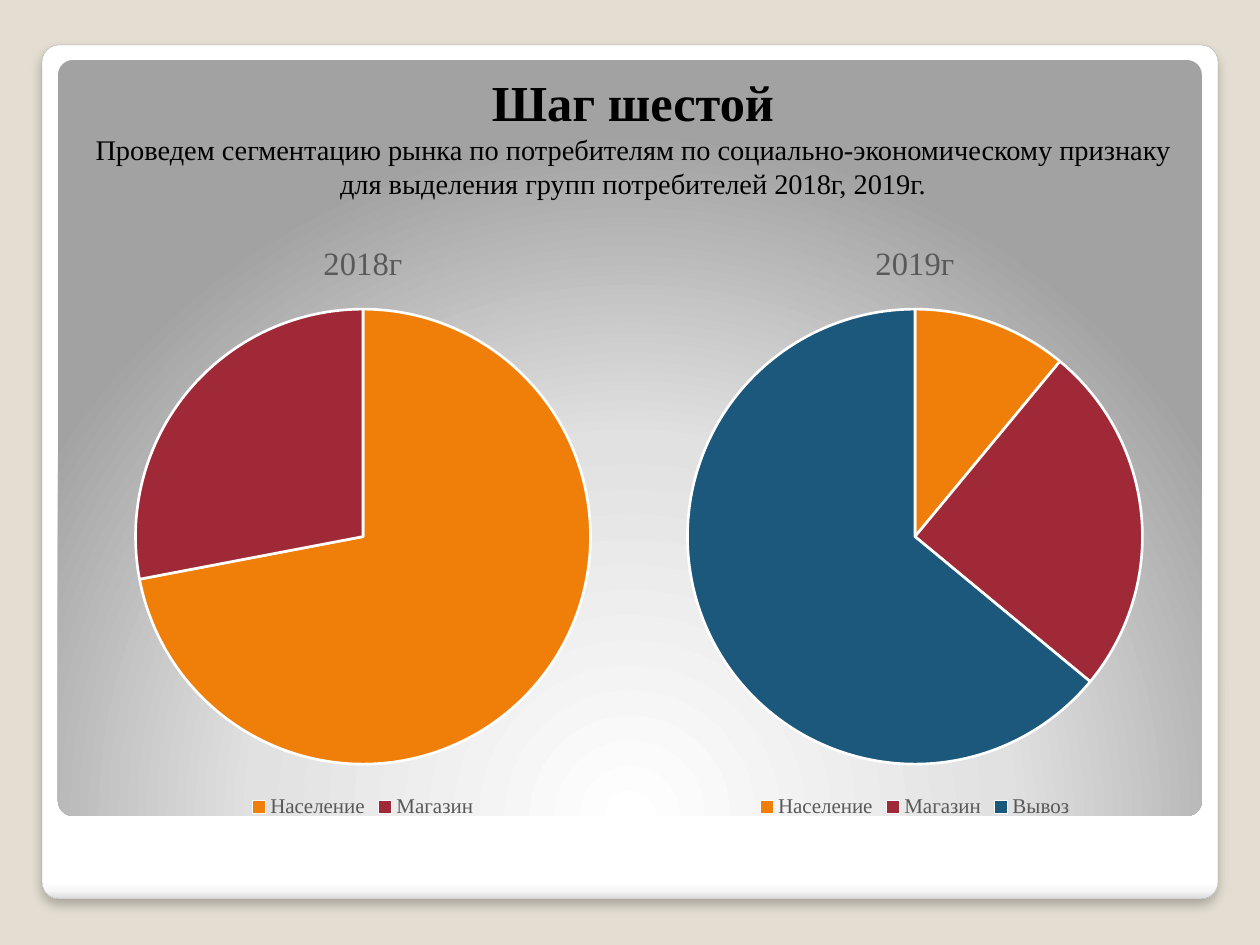
from pptx import Presentation
from pptx.chart.data import CategoryChartData as ChartData
from pptx.dml.color import RGBColor
from pptx.enum.chart import XL_CHART_TYPE as Kind, XL_LEGEND_POSITION as Side
from pptx.enum.shapes import MSO_SHAPE as Shape
from pptx.enum.text import MSO_ANCHOR as Anchor, PP_ALIGN as Align
from pptx.oxml import parse_xml
from pptx.oxml.ns import nsdecls
from pptx.util import Emu, Pt

FACE = "Times New Roman"
HUES = ["F07F09", "9F2936", "1B587C"]
GREY = "595959"


def px(*vals):
    """Turn pixel lengths into EMU."""
    return [Emu(round(v * 914400 / 126)) for v in vals]


def rgb(code):
    """Return the colour for a hex string."""
    return RGBColor.from_string(code)


def style(font, size, hue, bold=False):
    """Set face, size, colour and weight of a font."""
    font.name, font.size, font.bold = FACE, Pt(size), bold
    font.color.rgb = rgb(hue)


def add_panel(slide, box, stops, shade):
    """Add a rounded panel with a gradient fill and no line."""
    panel = slide.shapes.add_shape(Shape.ROUNDED_RECTANGLE, *px(*box))
    panel.adjustments[0] = 0.02
    panel.shadow.inherit = False
    panel.line.fill.background()
    panel.fill.gradient()
    marks = "".join(
        f'<a:gs pos="{pos * 1000}"><a:srgbClr val="{hue}"/></a:gs>'
        for pos, hue in stops)
    grad = parse_xml(
        f'<a:gradFill {nsdecls("a")} rotWithShape="1">'
        f'<a:gsLst>{marks}</a:gsLst>{shade}</a:gradFill>')
    props = panel._element.spPr
    props.replace(props.find(grad.tag), grad)
    return panel


def add_glow(panel):
    """Give a panel a thin edge and a soft shadow below it."""
    panel.line.color.rgb = rgb("A4A4A4")
    panel.line.width = Pt(0.16)
    glow = parse_xml(
        f'<a:outerShdw {nsdecls("a")} blurRad="{Pt(6)}" dist="{Pt(4)}" '
        'dir="5400000" rotWithShape="0"><a:srgbClr val="000000">'
        '<a:alpha val="25000"/></a:srgbClr></a:outerShdw>')
    panel._element.spPr.find(glow.tag.replace("outerShdw", "effectLst")).append(glow)


def add_title(slide, box, lines):
    """Add centred lines of (text, size, bold) set on the box bottom."""
    frame = slide.shapes.add_textbox(*px(*box)).text_frame
    frame.word_wrap = True
    frame.vertical_anchor = Anchor.BOTTOM
    frame.margin_bottom, = px(73)
    frame.text = "\n".join(text for text, _, _ in lines)
    for para, (_, size, bold) in zip(frame.paragraphs, lines):
        para.alignment = Align.CENTER
        style(para.runs[0].font, size, "000000", bold)


def add_pie(slide, box, name, shares):
    """Add a titled pie chart with a legend below."""
    data = ChartData()
    data.categories = list(shares)
    data.add_series(name, list(shares.values()))
    chart = slide.shapes.add_chart(Kind.PIE, *px(*box), data).chart
    style(chart.font, 10, "000000")
    chart.has_title = True
    label = chart.chart_title.text_frame
    label.text = name
    style(label.paragraphs[0].runs[0].font, 18.6, GREY)
    chart.has_legend = True
    chart.legend.position = Side.BOTTOM
    chart.legend.include_in_layout = False
    style(chart.legend.font, 12, GREY)
    plot = chart.plots[0]
    plot.vary_by_categories = True
    for i, hue in enumerate(HUES[:len(shares)]):
        form = plot.series[0].points[i].format
        form.fill.solid()
        form.fill.fore_color.rgb = rgb(hue)
        form.line.color.rgb = rgb("FFFFFF")
        form.line.width = Pt(1.5)


def main():
    """Build the slide and save it."""
    deck = Presentation()
    deck.slide_width, deck.slide_height = px(1260, 945)
    slide = deck.slides.add_slide(deck.slide_layouts[6])
    back = slide.background.fill
    back.solid()
    back.fore_color.rgb = rgb("E3DED1")

    card = add_panel(
        slide, (42, 45, 1176, 854),
        [(0, "FFFFFF"), (98, "FFFFFF"), (99, "F7F7F7"), (100, "DADADA")],
        '<a:lin ang="5400000" scaled="0"/>')
    add_glow(card)
    add_panel(
        slide, (58, 60, 1144, 756),
        [(0, "FFFFFF"), (55, "E1E1E1"), (100, "A2A2A2")],
        '<a:path path="circle"><a:fillToRect l="50000" t="175000" '
        'r="50000" b="-75000"/></a:path>')

    add_title(slide, (69, 55, 1128, 218), [
        ("Шаг шестой", 28.8, True),
        ("Проведем сегментацию рынка по потребителям по "
         "социально-экономическому признаку для выделения групп "
         "потребителей 2018г, 2019г.", 16.2, False)])

    years = {
        "2018г": {"Население": 72, "Магазин": 28},
        "2019г": {"Население": 11, "Магазин": 25, "Вывоз": 64}}
    for i, (name, shares) in enumerate(years.items()):
        add_pie(slide, (92 + 552 * i, 218, 542, 605), name, shares)
    deck.save("out.pptx")


if __name__ == "__main__":
    main()
